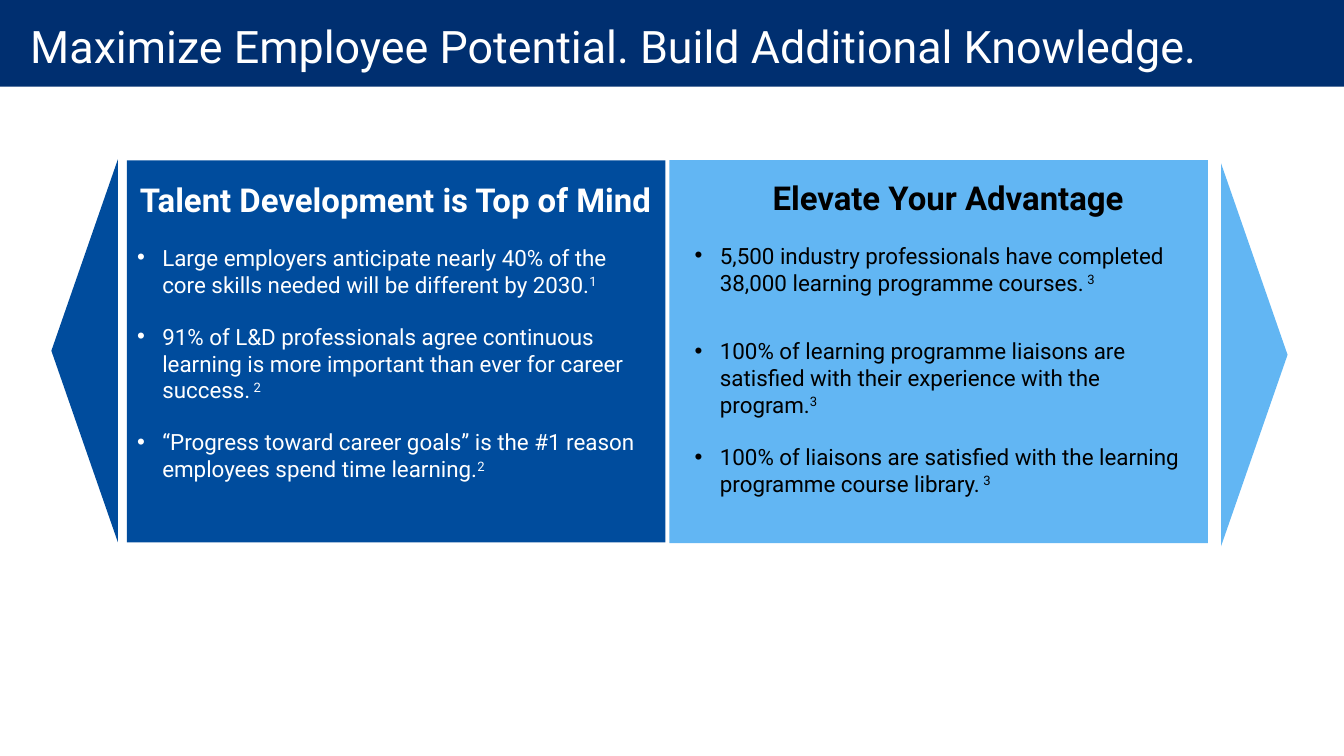
from lxml.etree import SubElement
from pptx import Presentation
from pptx.dml.color import RGBColor
from pptx.enum.shapes import MSO_SHAPE as Shape
from pptx.enum.text import MSO_ANCHOR as Anchor, MSO_AUTO_SIZE as AutoSize, PP_ALIGN as Align
from pptx.oxml.ns import qn
from pptx.util import Inches, Pt

NAVY = RGBColor(0x00, 0x2F, 0x70)
BLUE = RGBColor(0x00, 0x4C, 0x9D)
SKY = RGBColor(0x62, 0xB6, 0xF3)
WHITE = RGBColor(0xFF, 0xFF, 0xFF)
BLACK = RGBColor(0x00, 0x00, 0x00)
FONT = "Roboto"

# Each point: text, footnote mark, space before in points
TALENT_POINTS = [
    ("Large employers anticipate nearly 40% of the core skills needed will be different by 2030.", "1", 18),
    ("91% of L&D professionals agree continuous learning is more important than ever for career success.", " 2", 6),
    ("“Progress toward career goals” is the #1 reason employees spend time learning.", "2", 6),
]
ADVANTAGE_POINTS = [
    ("5,500 industry professionals have completed 38,000 learning programme courses.", " 3", 18),
    ("100% of learning programme liaisons are satisfied with their experience with the program.", "3", 18),
    ("100% of liaisons are satisfied with the learning programme course library.", " 3", 6),
]


def add_text(paragraph, text, size=16, color=WHITE, bold=False, superscript=False):
    run = paragraph.add_run()
    run.text = text
    font = run.font
    font.name, font.size, font.bold = FONT, Pt(size), bold
    font.color.rgb = color
    if superscript:
        font._element.set("baseline", "30000")


def set_bullet(paragraph, char=None):
    """Hang the paragraph on a bullet, or clear the inherited one."""
    props = paragraph._p.get_or_add_pPr()
    indent = Inches(0.25) if char else 0
    props.set("marL", str(indent))
    props.set("indent", str(-indent))
    if char:
        SubElement(props, qn("a:buFont")).set("typeface", "Arial")
        SubElement(props, qn("a:buChar")).set("char", char)
    else:
        SubElement(props, qn("a:buNone"))


def place(shape, left, top, width, height):
    shape.left, shape.top = Inches(left), Inches(top)
    shape.width, shape.height = Inches(width), Inches(height)


def add_backdrop(slide, kind, color, left, top, width, height, rotation=0):
    """Put a plain filled shape behind the placeholders."""
    shape = slide.shapes.add_shape(kind, Inches(left), Inches(top), Inches(width), Inches(height))
    shape.rotation = rotation
    shape.shadow.inherit = False
    shape.fill.solid()
    shape.fill.fore_color.rgb = color
    shape.line.fill.background()
    slide.shapes._spTree.insert(2, shape._element)


def add_title(slide, text, width, height):
    add_backdrop(slide, Shape.RECTANGLE, NAVY, 0, 0, width, height)
    title = slide.shapes.title
    place(title, 0, -0.03, width, height + 0.11)
    frame = title.text_frame
    frame.auto_size, frame.word_wrap = AutoSize.NONE, True
    frame.vertical_anchor = Anchor.MIDDLE
    frame.margin_left, frame.margin_right = Inches(0.3), Inches(0.2)
    frame.margin_top = frame.margin_bottom = 0
    frame.paragraphs[0].alignment = Align.LEFT
    add_text(frame.paragraphs[0], text, size=32)


def add_panel(slide, body, heading, points, fill, color, box, text_offset):
    """Coloured panel with a centred heading over a bulleted list."""
    left, top, width, height = box
    dx, dy = text_offset
    add_backdrop(slide, Shape.RECTANGLE, fill, *box)
    place(body, left + dx, top + dy, width - 0.01 - dx * 0.67, height - dy)
    frame = body.text_frame
    frame.auto_size, frame.word_wrap = AutoSize.NONE, True
    frame.vertical_anchor = Anchor.TOP

    title = frame.paragraphs[0]
    set_bullet(title)
    title.alignment = Align.CENTER
    title.line_spacing = Pt(28)
    title.space_before = title.space_after = Pt(0)
    add_text(title, heading, size=23.5, color=color, bold=True)

    for text, note, before in points:
        point = frame.add_paragraph()
        set_bullet(point, "•")
        point.space_before, point.space_after = Pt(before), Pt(12)
        add_text(point, text, color=color)
        add_text(point, note, color=color, superscript=True)


def add_pointer(slide, color, left, top, width, height, rotation):
    """Triangle turned a quarter so that it fills the given upright box."""
    shift = (height - width) / 2
    add_backdrop(slide, Shape.ISOSCELES_TRIANGLE, color,
                 left - shift, top + shift, height, width, rotation)


def main():
    prs = Presentation()
    prs.slide_width, prs.slide_height = Inches(13.33), Inches(7.5)
    slide = prs.slides.add_slide(prs.slide_layouts[3])
    talent, advantage = slide.placeholders[1], slide.placeholders[2]

    # Title band
    add_title(slide, "Maximize Employee Potential. Build Additional Knowledge.", 13.33, 0.86)

    # Panels
    add_panel(slide, talent, "Talent Development is Top of Mind", TALENT_POINTS,
              BLUE, WHITE, (1.26, 1.59, 5.34, 3.79), (0, 0.14))
    add_panel(slide, advantage, "Elevate Your Advantage", ADVANTAGE_POINTS,
              SKY, BLACK, (6.64, 1.59, 5.34, 3.8), (0.15, 0.12))

    # Outward pointers
    add_pointer(slide, BLUE, 0.51, 1.58, 0.66, 3.8, 270)
    add_pointer(slide, SKY, 12.11, 1.62, 0.66, 3.8, 90)

    prs.save("out.pptx")


if __name__ == "__main__":
    main()
